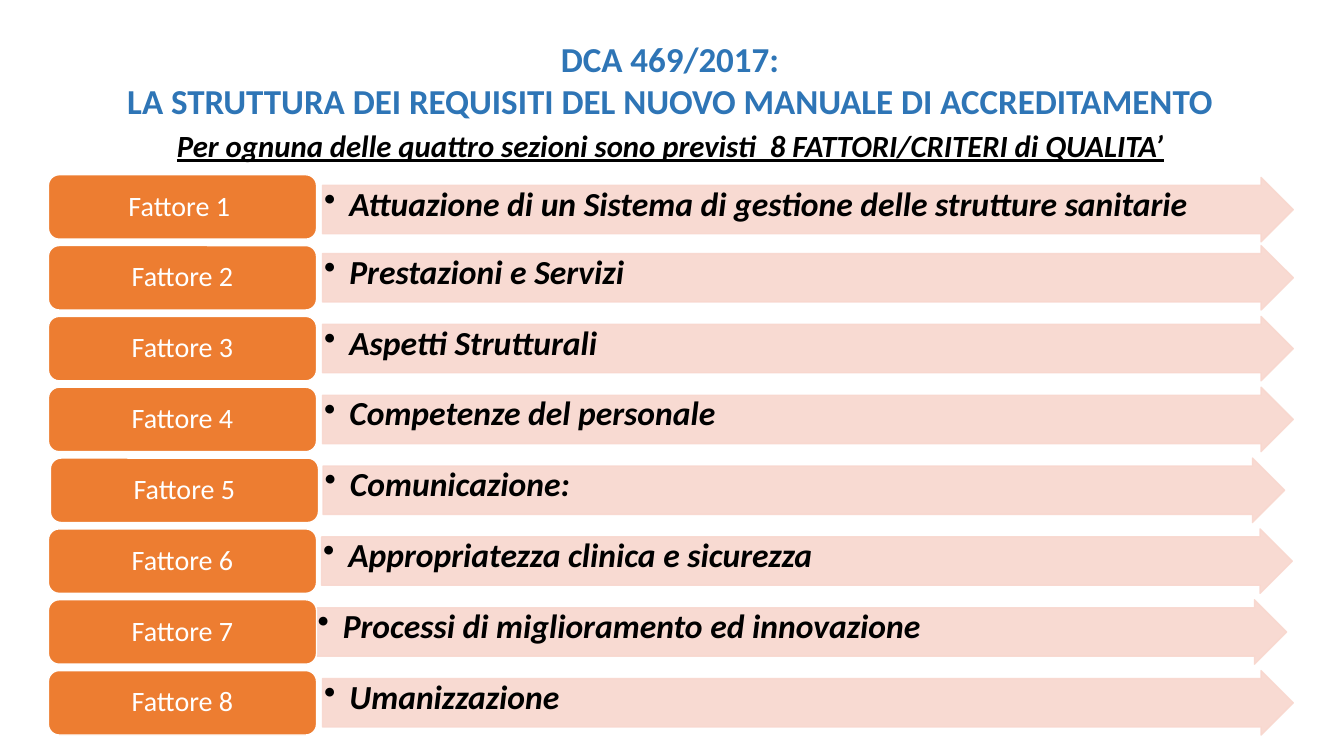
"""Build the slide on the eight quality factors of the accreditation manual."""
from lxml.etree import SubElement
from pptx import Presentation
from pptx.dml.color import RGBColor
from pptx.enum.shapes import MSO_SHAPE as SHAPE
from pptx.enum.text import MSO_ANCHOR as ANCHOR, MSO_AUTO_SIZE as AUTO, PP_ALIGN as ALIGN
from pptx.oxml.ns import qn
from pptx.util import Pt


def paint(fill, color):
    fill.solid()
    fill.fore_color.rgb = RGBColor.from_string(color)


def write(s, lines, color, font, para, frame):
    tf = s.text_frame
    for name, value in frame.items():
        setattr(tf, name, value)
    for i, line in enumerate(lines):
        p = tf.add_paragraph() if i else tf.paragraphs[0]
        for name, value in para.items():
            setattr(p, name, value)
        r = p.add_run()
        r.text = line
        paint(r.font.fill, color)
        for name, value in font.items():
            setattr(r.font, name, value)


TITLE_FONT = {"name": "Calibri", "size": Pt(25), "bold": True}
NOTE_FONT = {"name": "Calibri", "size": Pt(22), "bold": True, "italic": True, "underline": True}
LABEL_FONT = {"name": "Calibri", "size": Pt(20)}
ITEM_FONT = {"name": "Calibri", "size": Pt(24), "bold": True, "italic": True}
CENTER = {"alignment": ALIGN.CENTER}
LABEL_PARA = {"alignment": ALIGN.CENTER, "line_spacing": 0.9}
ITEM_PARA = {"alignment": ALIGN.LEFT, "line_spacing": 0.9}
HEAD_FRAME = {"word_wrap": True, "auto_size": AUTO.NONE, "vertical_anchor": ANCHOR.TOP}
LABEL_FRAME = {"word_wrap": True, "vertical_anchor": ANCHOR.MIDDLE}
ITEM_FRAME = {"word_wrap": True, "vertical_anchor": ANCHOR.TOP, "margin_left": Pt(1.2),
              "margin_right": Pt(1.2), "margin_top": Pt(1.2), "margin_bottom": Pt(1.2)}

FACTORS = [
    ("Fattore 1 ", "Attuazione di un Sistema di gestione delle strutture sanitarie", 34.6, 230.4, 693.4),
    ("Fattore 2", "Prestazioni e Servizi", 34.6, 230.4, 693.4),
    ("Fattore 3", "Aspetti Strutturali", 34.6, 230.4, 693.4),
    ("Fattore 4", "Competenze del personale", 34.6, 230.4, 693.4),
    ("Fattore 5", "Comunicazione:", 36, 230.8, 686.9),
    ("Fattore 6", "Appropriatezza clinica e sicurezza", 34.6, 229.7, 693.4),
    ("Fattore 7", "Processi di miglioramento ed innovazione", 34.6, 225.7, 693.4),
    ("Fattore 8", "Umanizzazione", 34.6, 230.4, 693.4),
]
TOP, PITCH, HEIGHT, LABEL_WIDTH = 124.8, 50.6, 46, 191.5
FIRST_ARROW_DROP = 1.9

prs = Presentation()
prs.slide_width, prs.slide_height = Pt(960), Pt(540)
sl = prs.slides.add_slide(prs.slide_layouts[5])

title = sl.shapes.title
title.left, title.top, title.width, title.height = Pt(67), Pt(23), Pt(828.7), Pt(67.7)
write(title, ["DCA 469/2017: ", "LA STRUTTURA DEI REQUISITI DEL NUOVO MANUALE DI ACCREDITAMENTO "],
      "2E75B6", TITLE_FONT, CENTER, HEAD_FRAME)

for i, (label, item, label_left, arrow_left, arrow_width) in enumerate(FACTORS):
    top = TOP + i * PITCH
    arrow_top = top if i else top + FIRST_ARROW_DROP
    arrow = sl.shapes.add_shape(SHAPE.RIGHT_ARROW, Pt(arrow_left), Pt(arrow_top),
                                Pt(arrow_width), Pt(HEIGHT))
    arrow.adjustments[0] = 0.75
    box = sl.shapes.add_shape(SHAPE.ROUNDED_RECTANGLE, Pt(label_left), Pt(top),
                              Pt(LABEL_WIDTH), Pt(HEIGHT))
    for s, fill, line in ((arrow, "F8D7CE", "F8D7CE"), (box, "ED7D31", "FFFFFF")):
        s.shadow.inherit = False
        paint(s.fill, fill)
        paint(s.line.fill, line)
        s.line.width = Pt(1)
    for clr in arrow.element.spPr.iter(qn("a:srgbClr")):
        SubElement(clr, qn("a:alpha"), val="90000")
    write(box, [label], "FFFFFF", LABEL_FONT, LABEL_PARA, LABEL_FRAME)
    write(arrow, [item], "000000", ITEM_FONT, ITEM_PARA, ITEM_FRAME)
    pPr = arrow.text_frame.paragraphs[0]._p.get_or_add_pPr()
    pPr.set("marL", str(Pt(18)))
    pPr.set("indent", str(Pt(-18)))
    SubElement(pPr, qn("a:buChar"), char="•")

note = sl.shapes.add_textbox(Pt(93.6), Pt(87.1), Pt(770.4), Pt(33.8))
write(note, ["Per ognuna delle quattro sezioni sono previsti  8 FATTORI/CRITERI di QUALITA’"],
      "000000", NOTE_FONT, CENTER, HEAD_FRAME)

prs.save("out.pptx")
